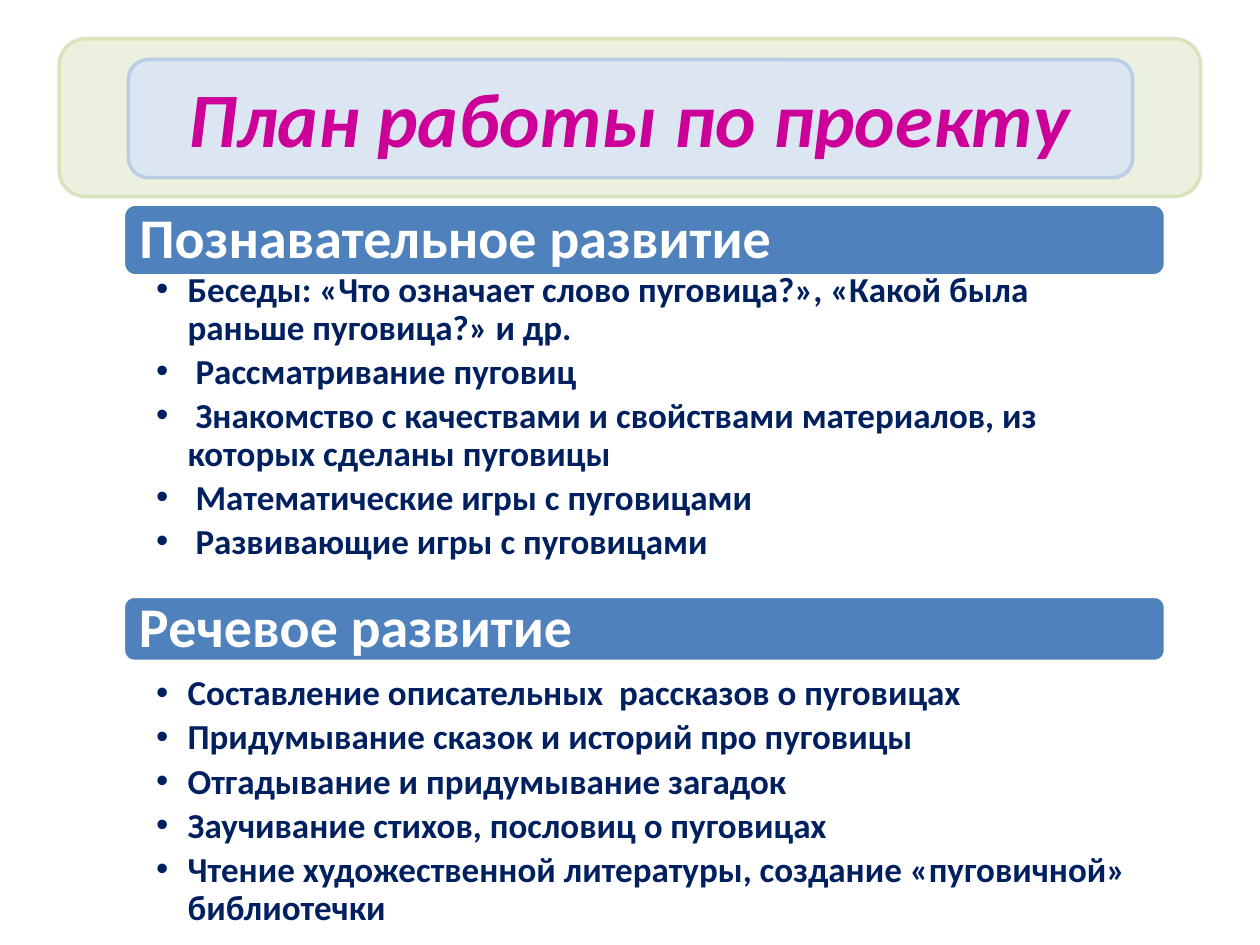
from dataclasses import dataclass

from lxml import etree
from pptx import Presentation
from pptx.dml.color import RGBColor
from pptx.enum.shapes import MSO_SHAPE
from pptx.enum.text import MSO_ANCHOR, PP_ALIGN
from pptx.oxml.ns import qn
from pptx.util import Inches, Pt

SLIDE_WIDTH, SLIDE_HEIGHT = Inches(10), Inches(7.5)
FONT = "Calibri"
BULLET_INDENT = Inches(0.25)

WHITE = RGBColor(0xFF, 0xFF, 0xFF)
MAGENTA = RGBColor(0xCC, 0x00, 0x99)
NAVY = RGBColor(0x00, 0x20, 0x60)
BLUE = RGBColor(0x4F, 0x81, 0xBD)
PALE_GREEN = RGBColor(0xEB, 0xF1, 0xDE)
GREEN_EDGE = RGBColor(0xD7, 0xE4, 0xBD)
PALE_BLUE = RGBColor(0xDC, 0xE6, 0xF2)
BLUE_EDGE = RGBColor(0xB9, 0xCD, 0xE5)


@dataclass(frozen=True)
class Area:
    """A rectangle in percent of the slide's width and height."""
    left: float
    top: float
    width: float
    height: float

    def lengths(self) -> tuple[int, int, int, int]:
        return (int(SLIDE_WIDTH * self.left / 100), int(SLIDE_HEIGHT * self.top / 100),
                int(SLIDE_WIDTH * self.width / 100), int(SLIDE_HEIGHT * self.height / 100))


@dataclass(frozen=True)
class Panel:
    area: Area
    fill: RGBColor
    edge: RGBColor


@dataclass(frozen=True)
class Section:
    heading: str
    band_top: float
    band_height: float
    list_top: float
    list_height: float
    activities: tuple[str, ...]


SECTION_LEFT, SECTION_WIDTH = 9.8, 82.7

TITLE_PANELS = (
    Panel(Area(4.7, 4.1, 90.6, 16.7), PALE_GREEN, GREEN_EDGE),
    Panel(Area(10.2, 6.3, 79.7, 12.5), PALE_BLUE, BLUE_EDGE),
)

SECTIONS = (
    Section("Познавательное развитие", 21.6, 7.6, 28.4, 32, (
        "Беседы: «Что означает слово пуговица?», «Какой была раньше пуговица?» и др.",
        " Рассматривание пуговиц",
        " Знакомство с качествами и свойствами материалов, из которых сделаны пуговицы",
        " Математические игры с пуговицами",
        " Развивающие игры с пуговицами",
    )),
    Section("Речевое развитие", 63.1, 6.9, 71.1, 28, (
        "Составление описательных  рассказов о пуговицах",
        "Придумывание сказок и историй про пуговицы",
        "Отгадывание и придумывание загадок",
        "Заучивание стихов, пословиц о пуговицах",
        "Чтение художественной литературы, создание «пуговичной» библиотечки",
    )),
)


def add_panel(slide, panel: Panel):
    """Draw a rounded panel and return it."""
    shape = slide.shapes.add_shape(MSO_SHAPE.ROUNDED_RECTANGLE, *panel.area.lengths())
    shape.shadow.inherit = False
    shape.fill.solid()
    shape.fill.fore_color.rgb = panel.fill
    shape.line.color.rgb = panel.edge
    shape.line.width = Pt(2)
    return shape


def add_bullet(paragraph) -> None:
    """Give a paragraph a round bullet with a hanging indent."""
    properties = paragraph._p.get_or_add_pPr()
    properties.set("marL", str(BULLET_INDENT))
    properties.set("indent", str(-BULLET_INDENT))
    etree.SubElement(properties, qn("a:buFont")).set("typeface", "Arial")
    etree.SubElement(properties, qn("a:buChar")).set("char", "•")


def write_text(frame, *lines: str, size: float, color: RGBColor, italic: bool = False,
               align=PP_ALIGN.LEFT, anchor=MSO_ANCHOR.MIDDLE, bullets: bool = False,
               line_spacing: float = 0.9, space_after: float = 0,
               insets: tuple[float, float, float, float] = (0.1, 0.05, 0.1, 0.05)) -> None:
    """Write bold lines as paragraphs; insets are left, top, right, bottom in inches."""
    frame.word_wrap = True
    frame.vertical_anchor = anchor
    (frame.margin_left, frame.margin_top,
     frame.margin_right, frame.margin_bottom) = map(Inches, insets)
    for index, line in enumerate(lines):
        paragraph = frame.add_paragraph() if index else frame.paragraphs[0]
        if bullets:
            add_bullet(paragraph)
        paragraph.alignment = align
        paragraph.line_spacing = line_spacing
        paragraph.space_after = Pt(space_after)
        run = paragraph.add_run()
        run.text = line
        run.font.name = FONT
        run.font.size = Pt(size)
        run.font.bold = True
        run.font.italic = italic
        run.font.color.rgb = color


def add_section(slide, section: Section) -> None:
    """Draw a heading band and the bulleted activities under it."""
    band_area = Area(SECTION_LEFT, section.band_top, SECTION_WIDTH, section.band_height)
    band = add_panel(slide, Panel(band_area, BLUE, WHITE))
    write_text(band.text_frame, section.heading, size=32, color=WHITE,
               insets=(0.1, 0, 0.1, 0))
    list_area = Area(SECTION_LEFT, section.list_top, SECTION_WIDTH, section.list_height)
    activities = slide.shapes.add_textbox(*list_area.lengths())
    write_text(activities.text_frame, *section.activities, size=20, color=NAVY,
               anchor=MSO_ANCHOR.TOP, bullets=True, space_after=3.6,
               insets=(0.26, 0.03, 0.14, 0.03))


def main() -> None:
    presentation = Presentation()
    presentation.slide_width, presentation.slide_height = SLIDE_WIDTH, SLIDE_HEIGHT
    slide = presentation.slides.add_slide(presentation.slide_layouts[6])

    # Title on two nested panels
    for panel in TITLE_PANELS:
        add_panel(slide, panel)
    title = slide.shapes.add_textbox(*Area(5, 4, 90, 16.7).lengths())
    write_text(title.text_frame, "План работы по проекту", size=44, color=MAGENTA,
               italic=True, align=PP_ALIGN.CENTER, line_spacing=1.0)

    # Areas of development
    for section in SECTIONS:
        add_section(slide, section)

    presentation.save("out.pptx")


if __name__ == "__main__":
    main()
